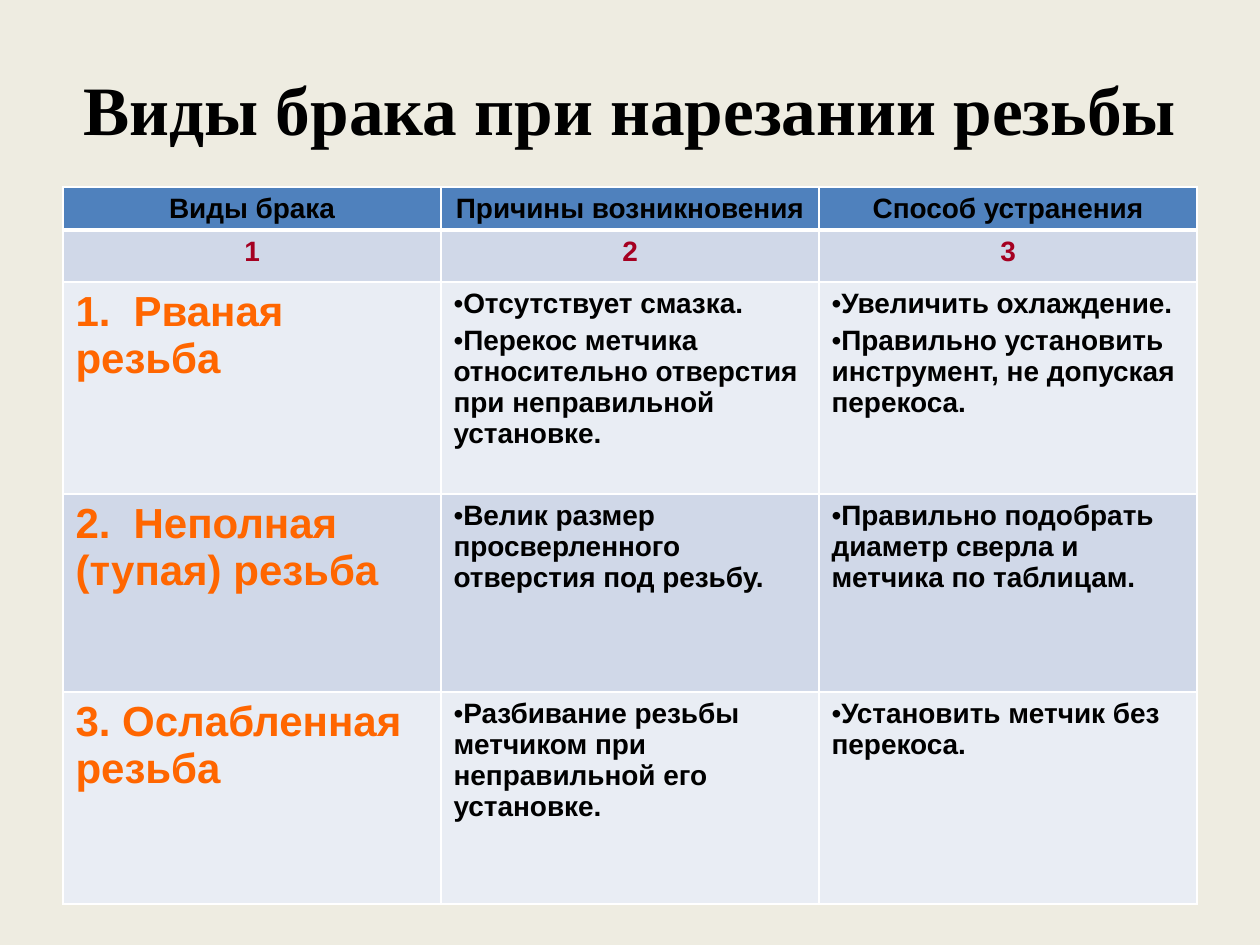
from lxml.etree import SubElement as Sub
from pptx import Presentation
from pptx.dml.color import RGBColor
from pptx.enum.text import MSO_ANCHOR as Anchor, PP_ALIGN as Align
from pptx.oxml.ns import qn
from pptx.util import Pt

UNIT = 914400 / 126
BLACK, RED, ORANGE, WHITE = "000000", "A50021", "FF6600", "FFFFFF"
BLUE, DARK, LIGHT = "4F81BD", "D0D8E8", "E9EDF4"


def px(n):
    return round(n * UNIT)


def tint(code):
    return RGBColor.from_string(code)


class Deck:
    def __init__(self, wide, high, back):
        self.pres = Presentation()
        self.pres.slide_width, self.pres.slide_height = px(wide), px(high)
        self.slide = self.pres.slides.add_slide(self.pres.slide_layouts[6])
        fill = self.slide.background.fill
        fill.solid()
        fill.fore_color.rgb = tint(back)

    def style(self, para, size, color, face="Arial"):
        font = para.font
        font.name, font.size, font.bold = face, Pt(size), True
        font.color.rgb = tint(color)

    def title(self, text, x, y, w, h):
        frame = self.slide.shapes.add_textbox(px(x), px(y), px(w), px(h)).text_frame
        frame.word_wrap = True
        frame.vertical_anchor = Anchor.MIDDLE
        para = frame.paragraphs[0]
        para.text, para.alignment = text, Align.CENTER
        self.style(para, 39.6, BLACK, "Times New Roman")

    def table(self, x, y, cols, rows):
        shape = self.slide.shapes.add_table(len(rows), len(cols), px(x), px(y),
                                            px(sum(cols)), px(sum(rows)))
        grid = shape.table
        grid.horz_banding = False
        for col, w in zip(grid.columns, cols):
            col.width = px(w)
        for row, h in zip(grid.rows, rows):
            row.height = px(h)
        return grid

    def cell(self, cell, lines, fill, size, color, align=Align.LEFT,
             bullet=False, top=1, base=1):
        # Borders come before the fill
        props = cell._tc.get_or_add_tcPr()
        for side, wide in zip("LRTB", (1, 1, top, base)):
            line = Sub(props, qn("a:ln" + side), w=str(Pt(wide)))
            Sub(Sub(line, qn("a:solidFill")), qn("a:srgbClr"), val=WHITE)
        cell.fill.solid()
        cell.fill.fore_color.rgb = tint(fill)
        cell.margin_bottom = px(3)
        # Text
        frame = cell.text_frame
        frame.text = "\n".join(lines)
        for i, para in enumerate(frame.paragraphs):
            form = para._p.get_or_add_pPr()
            if bullet:
                form.set("marL", "0")
                form.set("indent", "0")
                Sub(form, qn("a:buFont"), typeface="Arial")
                Sub(form, qn("a:buChar"), char="•")
            if "\t" in lines[i]:
                Sub(Sub(form, qn("a:tabLst")), qn("a:tab"), pos=str(px(58)), algn="l")
            para.alignment = align
            if i:
                para.space_before = Pt(size * 0.2)
            self.style(para, size, color)


HEADS = ["Виды брака", "Причины возникновения", "Способ устранения"]
FAULTS = [
    ("1.\tРваная резьба",
     ["Отсутствует смазка.",
      "Перекос метчика относительно отверстия при неправильной установке."],
     ["Увеличить охлаждение.",
      "Правильно установить инструмент, не допуская перекоса."]),
    ("2.\tНеполная (тупая) резьба",
     ["Велик размер просверленного отверстия под резьбу."],
     ["Правильно подобрать диаметр сверла и метчика по таблицам."]),
    ("3. Ослабленная резьба",
     ["Разбивание резьбы метчиком при неправильной его установке."],
     ["Установить метчик без перекоса."]),
]


def main():
    deck = Deck(1260, 945, "EEECE1")
    deck.title("Виды брака при нарезании резьбы", 63, 38, 1134, 140)
    grid = deck.table(63, 187, [378] * 3, [43, 52, 212, 198, 212])

    # Header and column numbers
    for c, head in enumerate(HEADS):
        deck.cell(grid.cell(0, c), [head], BLUE, 16, BLACK, Align.CENTER, base=3)
        deck.cell(grid.cell(1, c), [str(c + 1)], DARK, 16, RED, Align.CENTER, top=3)

    # Faults with causes and remedies
    for r, (name, *lists) in enumerate(FAULTS, 2):
        fill = DARK if r % 2 else LIGHT
        deck.cell(grid.cell(r, 0), [name], fill, 24, ORANGE)
        for c, lines in enumerate(lists, 1):
            deck.cell(grid.cell(r, c), lines, fill, 16, BLACK, bullet=True)

    deck.pres.save("out.pptx")


if __name__ == "__main__":
    main()
